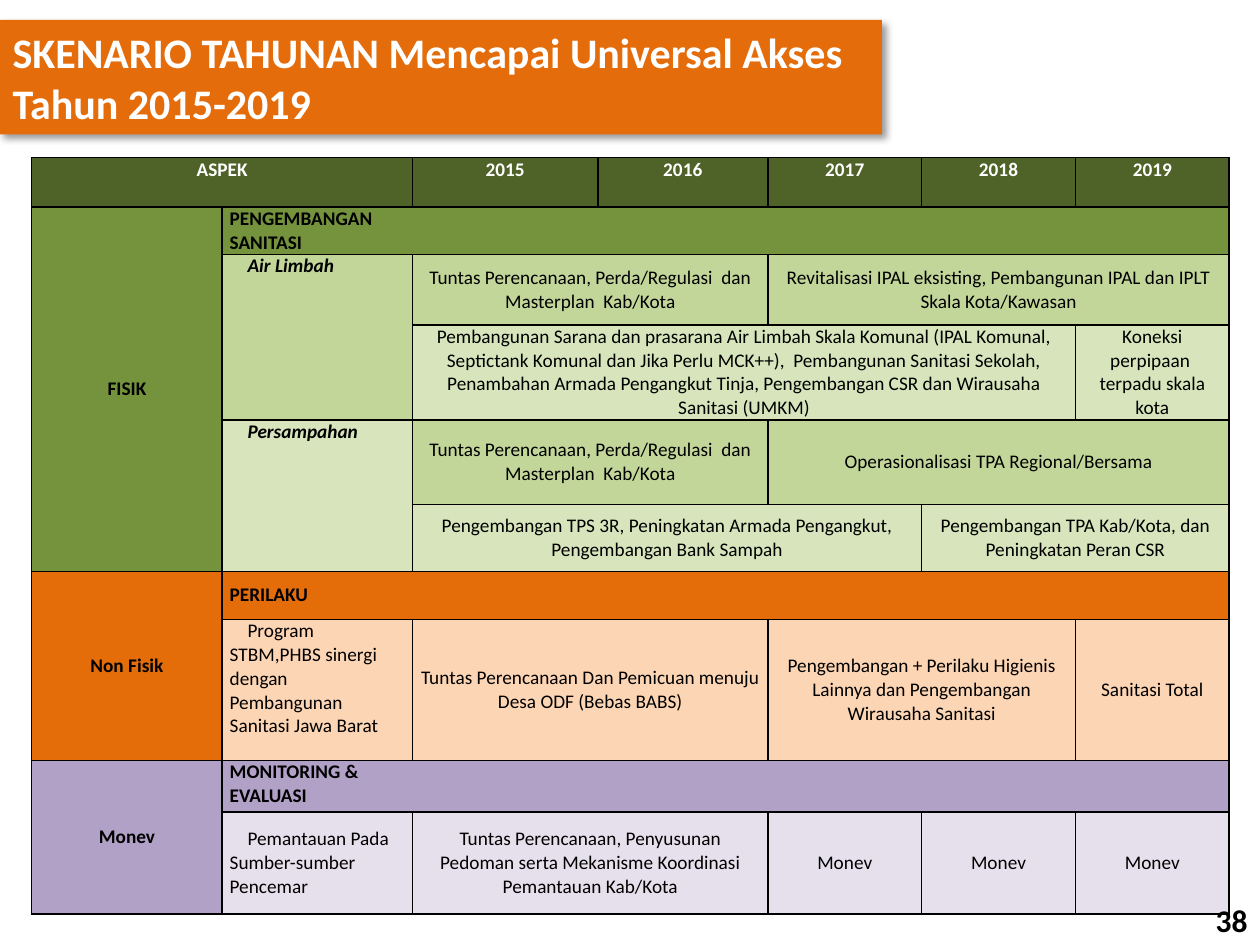
from lxml import etree
from pptx import Presentation
from pptx.dml.color import RGBColor
from pptx.enum import text
from pptx.oxml import parse_xml
from pptx.util import Cm, Pt

NS = "http://schemas.openxmlformats.org/drawingml/2006/main"
LEFT, CENTER, RIGHT = text.PP_ALIGN.LEFT, text.PP_ALIGN.CENTER, text.PP_ALIGN.RIGHT
TOP, MIDDLE = text.MSO_ANCHOR.TOP, text.MSO_ANCHOR.MIDDLE


def color(fmt, value):
    fmt.solid()
    fmt.fore_color.rgb = RGBColor.from_string(value)


def put(tf, words, size=11, ink="000000", bold=False, italic=False, align=CENTER, indent=0):
    tf.word_wrap = True
    p = tf.paragraphs[0]
    p.alignment = align
    if indent:
        p._p.get_or_add_pPr().set("indent", str(Cm(indent)))
    r = p.add_run()
    r.text = words
    r.font.name, r.font.size = "Calibri", Pt(size)
    r.font.bold, r.font.italic = bold, italic
    color(r.font.fill, ink)


prs = Presentation()
prs.slide_width, prs.slide_height = Cm(25.4), Cm(19.05)
s = prs.slides.add_slide(prs.slide_layouts[5])

sp = s.shapes.title
sp.left, sp.top, sp.width, sp.height = Cm(0), Cm(0.4), Cm(17.78), Cm(2.31)
color(sp.fill, "E46C0A")
sp.line.fill.background()
sp._element.spPr.append(parse_xml(
    f'<a:effectLst xmlns:a="{NS}"><a:outerShdw blurRad="{Pt(4)}" dist="{Pt(3)}" dir="2700000" '
    'algn="tl" rotWithShape="0"><a:srgbClr val="000000"><a:alpha val="40000"/></a:srgbClr>'
    '</a:outerShdw></a:effectLst>'))
sp.text_frame.vertical_anchor = MIDDLE
put(sp.text_frame, "SKENARIO TAHUNAN Mencapai Universal Akses Tahun 2015-2019",
    size=24, ink="FFFFFF", bold=True, align=LEFT)

widths = [3.84, 3.84, 3.73, 3.43, 3.1, 3.1, 3.1]
heights = [0.99, 0.94, 1.42, 1.91, 1.7, 1.35, 0.97, 2.84, 1.04, 2.06]
tbl = s.shapes.add_table(len(heights), len(widths), Cm(0.64), Cm(3.18),
                         Cm(sum(widths)), Cm(sum(heights))).table
tbl.first_row = tbl.horz_banding = False
for column, width in zip(tbl.columns, widths):
    column.width = Cm(width)
for row, height in zip(tbl.rows, heights):
    row.height = Cm(height)

head = dict(ink="FFFFFF", bold=True)
group = dict(bold=True)
banner = dict(bold=True, align=LEFT)
topic = dict(bold=True, italic=True, align=LEFT, indent=0.36)
note = dict(align=LEFT, indent=0.36)
body = {}

DARK, GREEN, LIGHT, PALE = "4F6228", "75923C", "C2D69A", "D7E4BC"
ORANGE, PEACH, PURPLE, LILAC = "E46D0A", "FCD5B4", "B2A1C7", "E5E0EC"
planning = "Tuntas Perencanaan, Perda/Regulasi  dan Masterplan  Kab/Kota"

cells = [
    (0, 0, 1, 2, DARK, TOP, head, "ASPEK"),
    *[(0, 2 + i, 1, 1, DARK, TOP, head, str(2015 + i)) for i in range(5)],
    (1, 0, 5, 1, GREEN, MIDDLE, group, "FISIK"),
    (1, 1, 1, 1, GREEN, MIDDLE, banner, "PENGEMBANGAN SANITASI"),
    (2, 1, 2, 1, LIGHT, TOP, topic, "Air Limbah"),
    (2, 2, 1, 2, LIGHT, MIDDLE, body, planning),
    (2, 4, 1, 3, LIGHT, MIDDLE, body,
     "Revitalisasi IPAL eksisting, Pembangunan IPAL dan IPLT Skala Kota/Kawasan"),
    (3, 2, 1, 4, PALE, MIDDLE, body,
     "Pembangunan Sarana dan prasarana Air Limbah Skala Komunal (IPAL Komunal, Septictank "
     "Komunal dan Jika Perlu MCK++),  Pembangunan Sanitasi Sekolah, Penambahan Armada "
     "Pengangkut Tinja, Pengembangan CSR dan Wirausaha Sanitasi (UMKM)"),
    (3, 6, 1, 1, PALE, MIDDLE, body, "Koneksi perpipaan  terpadu skala kota"),
    (4, 1, 2, 1, PALE, TOP, topic, "Persampahan"),
    (4, 2, 1, 2, LIGHT, MIDDLE, body, planning),
    (4, 4, 1, 3, LIGHT, MIDDLE, body, "Operasionalisasi TPA Regional/Bersama"),
    (5, 2, 1, 3, PALE, MIDDLE, body,
     "Pengembangan TPS 3R, Peningkatan Armada Pengangkut, Pengembangan Bank Sampah"),
    (5, 5, 1, 2, PALE, MIDDLE, body, "Pengembangan TPA Kab/Kota, dan Peningkatan Peran CSR"),
    (6, 0, 2, 1, ORANGE, MIDDLE, group, "Non Fisik"),
    (6, 1, 1, 1, ORANGE, MIDDLE, banner, "PERILAKU"),
    (7, 1, 1, 1, PEACH, TOP, note,
     "Program STBM,PHBS sinergi dengan  Pembangunan Sanitasi Jawa Barat"),
    (7, 2, 1, 2, PEACH, MIDDLE, body,
     "Tuntas Perencanaan Dan Pemicuan menuju Desa ODF (Bebas BABS)"),
    (7, 4, 1, 2, PEACH, MIDDLE, body,
     "Pengembangan + Perilaku Higienis Lainnya dan Pengembangan Wirausaha Sanitasi"),
    (7, 6, 1, 1, PEACH, MIDDLE, body, "Sanitasi Total"),
    (8, 0, 2, 1, PURPLE, MIDDLE, group, "Monev"),
    (8, 1, 1, 1, PURPLE, TOP, banner, "MONITORING & EVALUASI"),
    (9, 1, 1, 1, LILAC, MIDDLE, note, "Pemantauan Pada Sumber-sumber Pencemar"),
    (9, 2, 1, 2, LILAC, MIDDLE, body,
     "Tuntas Perencanaan, Penyusunan Pedoman serta Mekanisme Koordinasi Pemantauan Kab/Kota"),
    *[(9, col, 1, 1, LILAC, MIDDLE, body, "Monev") for col in (4, 5, 6)],
]

banner_fills = {1: GREEN, 6: ORANGE, 8: PURPLE}
for i in range(len(heights)):
    for j in range(len(widths)):
        cell = tbl.cell(i, j)
        sides = "LRTB"
        if i in banner_fills and j > 0:
            sides = {1: "LTB", 6: "RTB"}.get(j, "TB")
        tcPr = cell._tc.get_or_add_tcPr()
        for side in "LRTB":
            ln = etree.SubElement(tcPr, f"{{{NS}}}ln{side}", w=str(Pt(1)))
            if side in sides:
                fill = etree.SubElement(ln, f"{{{NS}}}solidFill")
                etree.SubElement(fill, f"{{{NS}}}srgbClr", val="000000")
            else:
                etree.SubElement(ln, f"{{{NS}}}noFill")
        cell.margin_left = cell.margin_right = Cm(0.15)
        cell.margin_top = cell.margin_bottom = Cm(0)
        cell.text_frame.paragraphs[0].font.size = Pt(11)
        if i in banner_fills:
            color(cell.fill, banner_fills[i])

for i, j, rows, cols, fill, anchor, style, words in cells:
    cell = tbl.cell(i, j)
    if rows * cols > 1:
        cell.merge(tbl.cell(i + rows - 1, j + cols - 1))
    color(cell.fill, fill)
    cell.vertical_anchor = anchor
    put(cell.text_frame, words, **style)

number = s.shapes.add_textbox(Cm(23.5), Cm(18.03), Cm(1.9), Cm(1.02))
put(number.text_frame, "38", size=18, bold=True, align=RIGHT)

prs.save("out.pptx")
